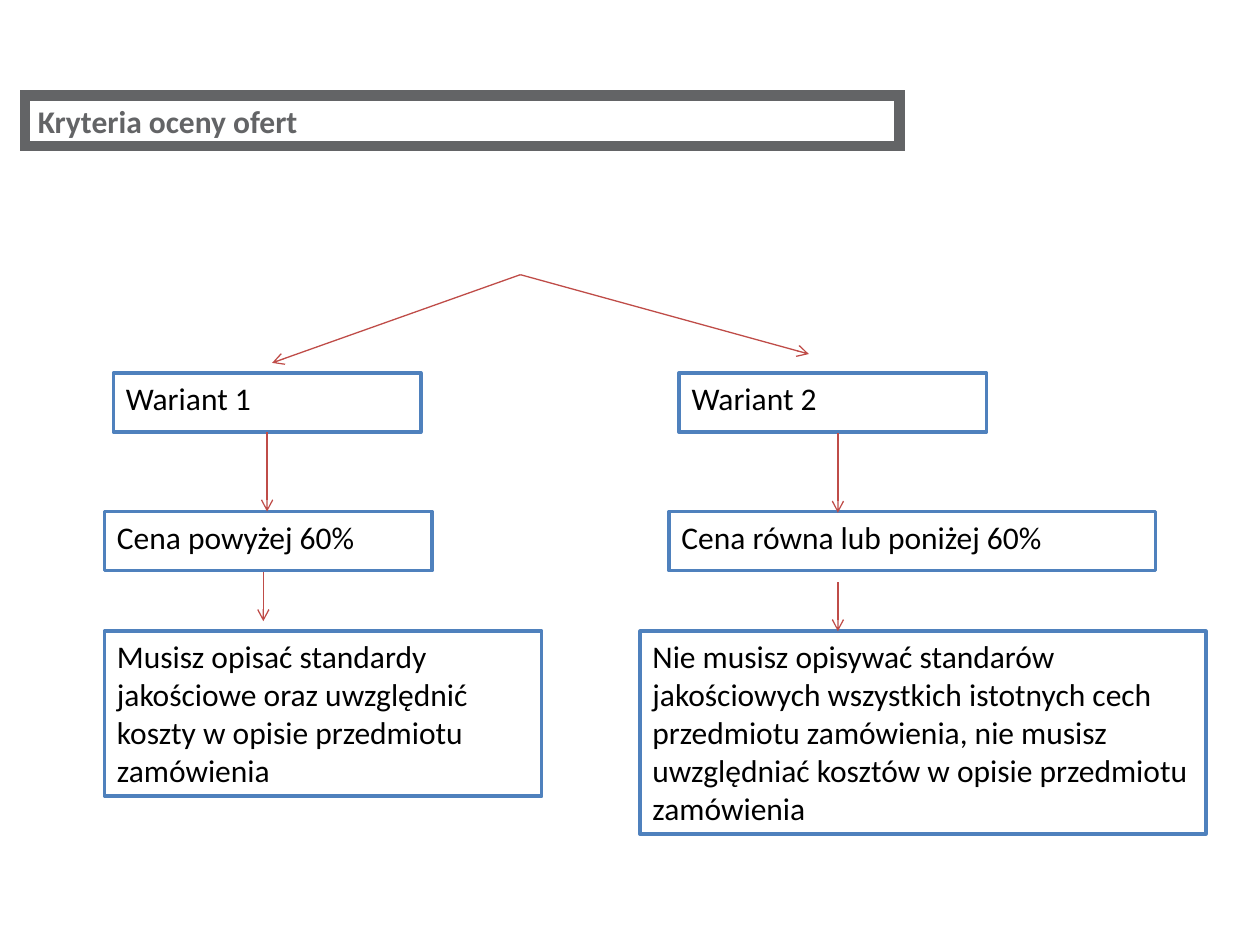
from dataclasses import dataclass

from lxml.etree import SubElement
from pptx import Presentation
from pptx.dml.color import RGBColor
from pptx.enum.shapes import MSO_CONNECTOR as Connector
from pptx.enum.text import MSO_ANCHOR as Anchor, MSO_AUTO_SIZE as AutoSize, PP_ALIGN as Align
from pptx.oxml.ns import qn
from pptx.util import Inches, Pt

GREY, BLUE, RED, BLACK, WHITE = "636466", "4F81BD", "BF4C48", "000000", "FFFFFF"


@dataclass
class Box:
    text: str
    left: float
    top: float
    width: float
    height: float


@dataclass
class Arrow:
    start: tuple[float, float]
    end: tuple[float, float]


VARIANT_TOP, PRICE_TOP, DUTY_TOP, LABEL_HEIGHT = 2.96, 4.06, 5.01, 0.47
FORK = (4.13, 2.18)

TITLE = Box("Kryteria oceny ofert", 0.2, 0.76, 6.94, 0.4)
BOXES = [
    Box("Wariant 1", 0.9, VARIANT_TOP, 2.44, LABEL_HEIGHT),
    Box("Wariant 2", 5.39, VARIANT_TOP, 2.44, LABEL_HEIGHT),
    Box("Cena powyżej 60%", 0.83, PRICE_TOP, 2.6, LABEL_HEIGHT),
    Box("Cena równa lub poniżej 60%", 5.31, PRICE_TOP, 3.86, LABEL_HEIGHT),
    Box("Musisz opisać standardy jakościowe oraz uwzględnić koszty "
        "w opisie przedmiotu zamówienia", 0.83, DUTY_TOP, 3.47, 1.31),
    Box("Nie musisz opisywać standarów jakościowych wszystkich istotnych cech "
        "przedmiotu zamówienia, nie musisz uwzględniać kosztów "
        "w opisie przedmiotu zamówienia", 5.08, DUTY_TOP, 4.49, 1.61),
]
ARROWS = [
    Arrow(FORK, (2.16, 2.88)),
    Arrow(FORK, (6.42, 2.81)),
    Arrow((2.12, 3.43), (2.12, PRICE_TOP)),
    Arrow((2.09, 4.54), (2.09, 4.93)),
    Arrow((6.65, 3.44), (6.65, 4.07)),
    Arrow((6.65, 4.62), (6.65, DUTY_TOP)),
]


def color(value: str) -> RGBColor:
    return RGBColor.from_string(value)


def set_line(shape, value: str, width: float) -> None:
    shape.line.color.rgb = color(value)
    shape.line.width = Pt(width)


def write(shape, text: str, *, size: float = 18, ink: str = BLACK, bold: bool = False) -> None:
    frame = shape.text_frame
    frame.word_wrap = True
    frame.auto_size = AutoSize.NONE
    frame.vertical_anchor = Anchor.TOP
    para = frame.paragraphs[0]
    para.alignment = Align.LEFT
    span = para.add_run()
    span.text = text
    span.font.name = "Calibri"
    span.font.size = Pt(size)
    span.font.bold = bold
    span.font.color.rgb = color(ink)


def place_title(page, title: Box) -> None:
    shape = page.shapes.title
    shape.left, shape.top = Inches(title.left), Inches(title.top)
    shape.width, shape.height = Inches(title.width), Inches(title.height)
    set_line(shape, GREY, 6)
    SubElement(shape.line._ln, qn("a:miter"), lim="800000")
    write(shape, title.text, ink=GREY, bold=True)


def add_box(page, box: Box) -> None:
    shape = page.shapes.add_textbox(
        Inches(box.left), Inches(box.top), Inches(box.width), Inches(box.height))
    shape.fill.solid()
    shape.fill.fore_color.rgb = color(WHITE)
    set_line(shape, BLUE, 2)
    write(shape, box.text)


def add_arrow(page, arrow: Arrow) -> None:
    points = [Inches(value) for value in (*arrow.start, *arrow.end)]
    line = page.shapes.add_connector(Connector.STRAIGHT, *points)
    set_line(line, RED, 0.75)
    SubElement(line.line._ln, qn("a:tailEnd"), type="arrow")
    SubElement(line._element.spPr, qn("a:effectLst"))


def main() -> None:
    deck = Presentation()
    deck.slide_width, deck.slide_height = Inches(10), Inches(7.5)
    page = deck.slides.add_slide(deck.slide_layouts[5])
    place_title(page, TITLE)
    for box in BOXES:
        add_box(page, box)
    for arrow in ARROWS:
        add_arrow(page, arrow)
    deck.save("out.pptx")


if __name__ == "__main__":
    main()
